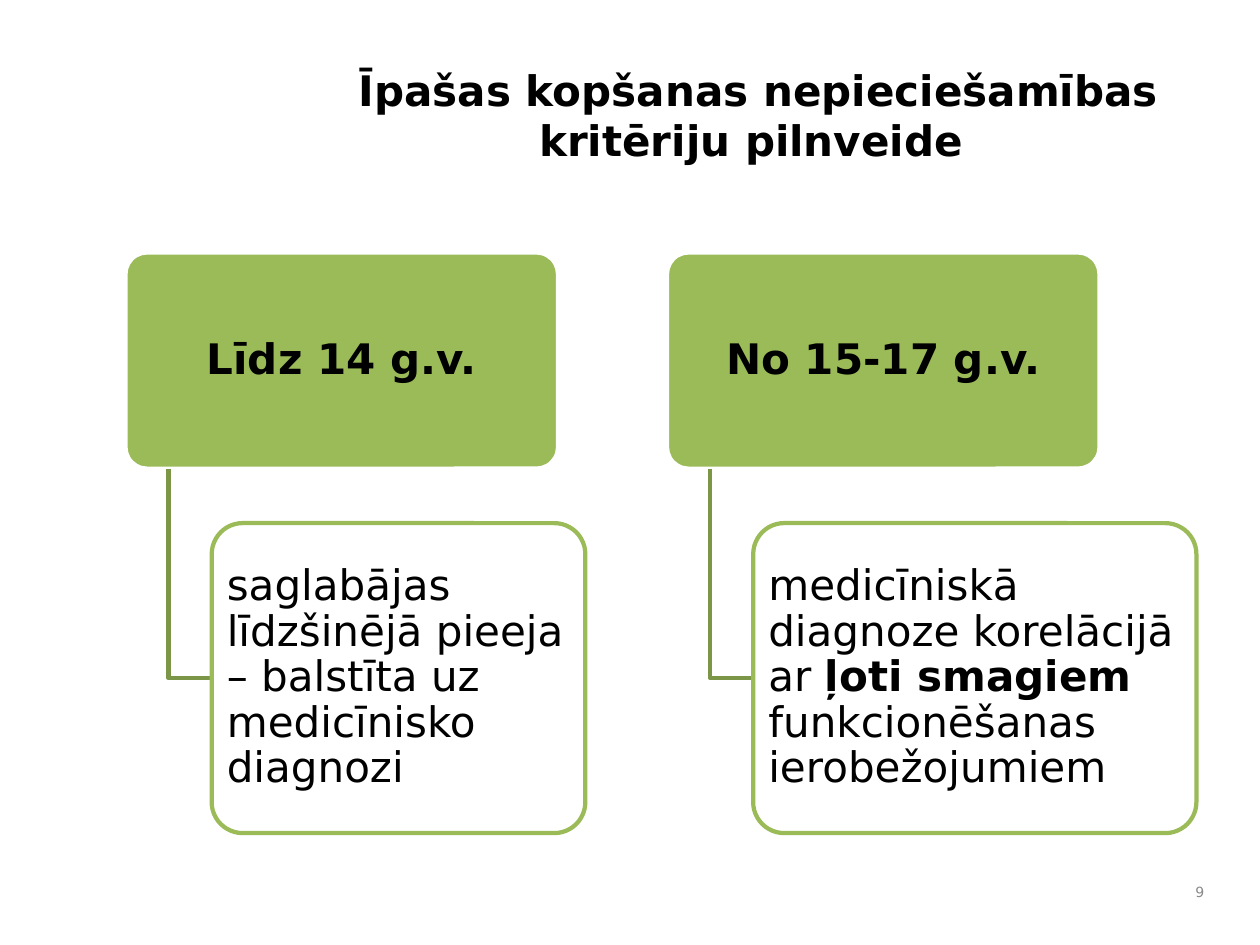
import lxml.etree
import pptx
import pptx.dml.color
import pptx.enum.shapes
import pptx.enum.text
import pptx.oxml.ns
import pptx.util

Inches = pptx.util.Inches
ALIGN = pptx.enum.text.PP_ALIGN
ROUNDED = pptx.enum.shapes.MSO_SHAPE.ROUNDED_RECTANGLE
GREEN = "9BBB59"


def paint(color_format, color):
    color_format.rgb = pptx.dml.color.RGBColor.from_string(color)


def write(shape, runs, align, margins, spacing=1.0, size=20, color="000000"):
    frame = shape.text_frame
    horizontal, vertical = (Inches(margin) for margin in margins)
    frame_format = {
        "word_wrap": True,
        "vertical_anchor": pptx.enum.text.MSO_ANCHOR.MIDDLE,
        "margin_left": horizontal,
        "margin_right": horizontal,
        "margin_top": vertical,
        "margin_bottom": vertical,
    }
    for name, value in frame_format.items():
        setattr(frame, name, value)
    paragraph = frame.paragraphs[0]
    paragraph.alignment = align
    paragraph.line_spacing = spacing
    for text, bold in runs:
        run = paragraph.add_run()
        run.text = text
        font_format = {"name": "DejaVu Sans", "size": pptx.util.Pt(size), "bold": bold}
        for name, value in font_format.items():
            setattr(run.font, name, value)
        paint(run.font.color, color)


presentation = pptx.Presentation()
presentation.slide_width = Inches(8.33)
presentation.slide_height = Inches(6.25)
slide = presentation.slides.add_slide(presentation.slide_layouts[6])
shapes = slide.shapes

title = shapes.add_textbox(Inches(2.12), Inches(0.35), Inches(5.79), Inches(0.82))
write(title, [("Īpašas kopšanas nepieciešamības kritēriju pilnveide ", True)],
      ALIGN.CENTER, (0.1, 0.05))

age_groups = [
    (0.83, "Līdz 14 g.v.", 2.47,
     [("saglabājas līdzšinējā pieeja – balstīta uz medicīnisko diagnozi", False)]),
    (4.41, "No 15-17 g.v.", 2.93,
     [("medicīniskā diagnoze korelācijā ar ", False),
      ("ļoti smagiem ", True),
      ("funkcionēšanas ierobežojumiem", False)]),
]
header_top, header_width, header_height = 1.67, 2.86, 1.43
detail_top, detail_height, detail_indent = 3.46, 2.05, 0.57

for left, age, detail_width, criteria in age_groups:
    header_bottom = header_top + header_height
    detail_left = left + detail_indent
    detail_middle = detail_top + detail_height / 2
    trunk = left + detail_indent / 2

    header = shapes.add_shape(ROUNDED, Inches(left), Inches(header_top),
                              Inches(header_width), Inches(header_height))
    builder = shapes.build_freeform(Inches(trunk), Inches(header_bottom))
    builder.add_line_segments(
        [(Inches(trunk), Inches(detail_middle)),
         (Inches(detail_left), Inches(detail_middle))], close=False)
    elbow = builder.convert_to_shape()
    detail = shapes.add_shape(ROUNDED, Inches(detail_left), Inches(detail_top),
                              Inches(detail_width), Inches(detail_height))

    for shape, fill, line in [(header, GREEN, "FFFFFF"),
                              (elbow, None, "7C9647"),
                              (detail, "FFFFFF", GREEN)]:
        shape.shadow.inherit = False
        paint(shape.line.color, line)
        shape.line.width = pptx.util.Pt(2)
        if fill:
            shape.adjustments[0] = 0.1
            shape.fill.solid()
            paint(shape.fill.fore_color, fill)
        else:
            shape.fill.background()

    detail_color = detail.fill._xPr.find(".//" + pptx.oxml.ns.qn("a:srgbClr"))
    lxml.etree.SubElement(detail_color, pptx.oxml.ns.qn("a:alpha"), val="90000")

    write(header, [(age, True)], ALIGN.CENTER, (0.04, 0.03), 0.9)
    write(detail, criteria, ALIGN.LEFT, (0.04, 0.03), 0.9)

page_number = shapes.add_textbox(Inches(7.78), Inches(5.76), Inches(0.28), Inches(0.28))
write(page_number, [("9", False)], ALIGN.RIGHT, (0.1, 0.05), size=6.7, color="898989")

presentation.save("out.pptx")
